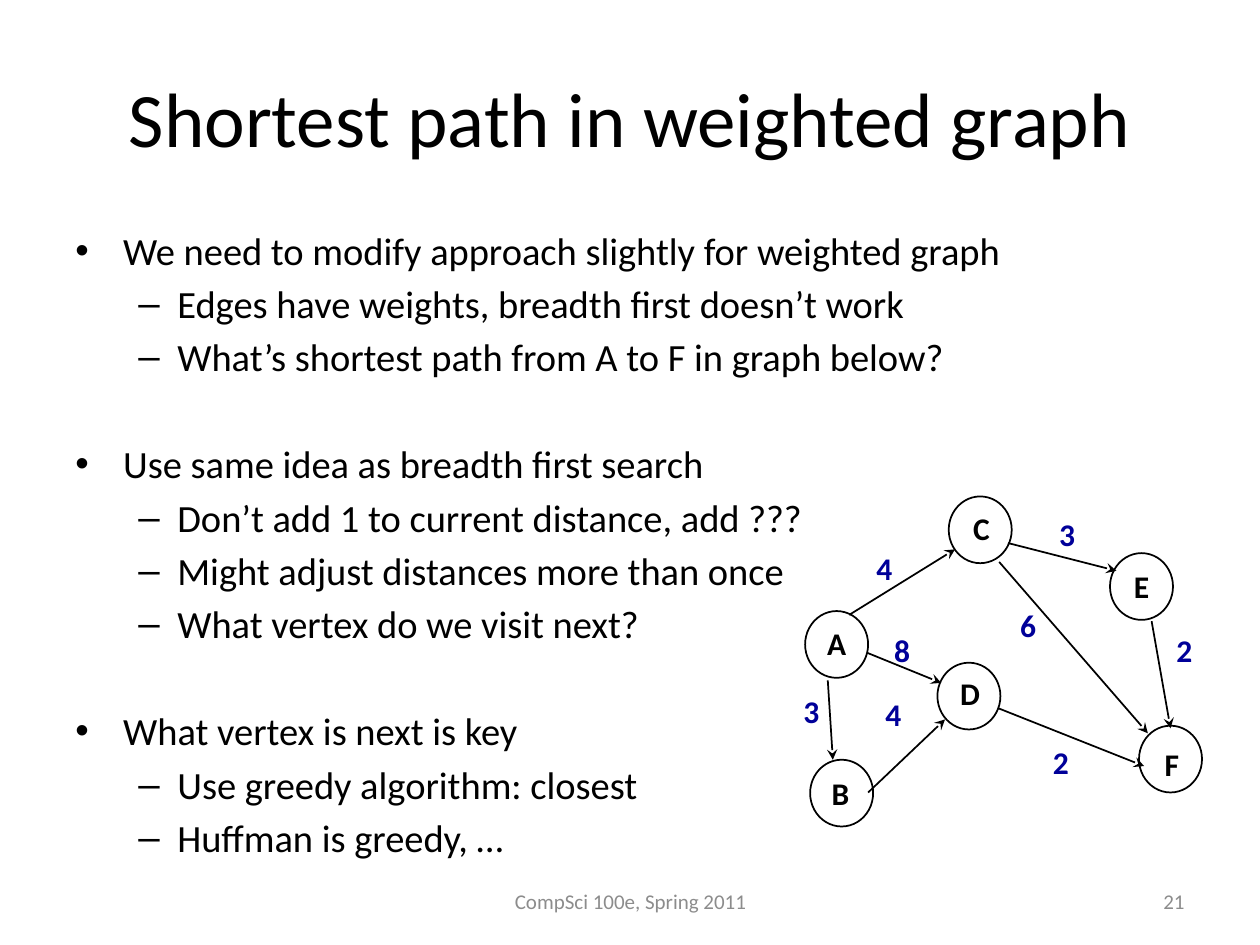
from lxml import etree
from pptx import Presentation
from pptx.dml.color import RGBColor
from pptx.enum.shapes import MSO_CONNECTOR, MSO_SHAPE
from pptx.enum.text import MSO_ANCHOR, PP_ALIGN
from pptx.oxml.ns import qn
from pptx.util import Inches, Pt

STRAIGHT, ELLIPSE = MSO_CONNECTOR.STRAIGHT, MSO_SHAPE.OVAL
TOP, MIDDLE = MSO_ANCHOR.TOP, MSO_ANCHOR.MIDDLE
LEFT, CENTER, RIGHT = PP_ALIGN.LEFT, PP_ALIGN.CENTER, PP_ALIGN.RIGHT

TITLE = "Shortest path in weighted graph"
SECTIONS = [
    ("We need to modify approach slightly for weighted graph",
     ["Edges have weights, breadth first doesn’t work",
      "What’s shortest path from A to F in graph below?"]),
    ("Use same idea as breadth first search",
     ["Don’t add 1 to current distance, add ???",
      "Might adjust distances more than once",
      "What vertex do we visit next?"]),
    ("What vertex is next is key",
     ["Use greedy algorithm: closest", "Huffman is greedy, …"]),
]
FOOTER, PAGE_NUMBER = "CompSci 100e, Spring 2011", "21"

# vertex: (circle left, top), (letter centre x, y)
VERTICES = {
    "A": ((6.39, 4.85), (6.64, 5.10)),
    "B": ((6.43, 6.03), (6.67, 6.29)),
    "C": ((7.53, 3.94), (7.79, 4.19)),
    "D": ((7.44, 5.26), (7.70, 5.50)),
    "E": ((8.81, 4.39), (9.06, 4.65)),
    "F": ((9.04, 5.76), (9.30, 6.06)),
}
# weight, (weight centre x, y), arrow start, arrow end
EDGES = [
    ("4", (7.02, 4.51), (6.74, 4.88), (7.58, 4.36)),  # A to C
    ("8", (7.16, 5.16), (6.88, 5.18), (7.47, 5.42)),  # A to D
    ("3", (6.44, 5.64), (6.57, 5.40), (6.61, 6.03)),  # A to B
    ("4", (7.09, 5.67), (6.89, 6.29), (7.50, 5.71)),  # B to D
    ("3", (8.47, 4.24), (8.00, 4.31), (8.86, 4.53)),  # C to E
    ("6", (8.16, 4.96), (7.93, 4.46), (9.11, 5.82)),  # C to F
    ("2", (8.42, 6.05), (7.92, 5.62), (9.08, 6.08)),  # D to F
    ("2", (9.40, 5.16), (9.14, 4.93), (9.29, 5.78)),  # E to F
]

THEME = {
    "font": "Calibri",
    "text": RGBColor(0, 0, 0),
    "weight": RGBColor(0x00, 0x00, 0x99),
    "muted": RGBColor(0x8C, 0x8C, 0x8C),
    "title_size": 44, "body_size": 22, "label_size": 18, "footer_size": 12,
}
WIDTH, HEIGHT, MARGIN = 10, 7.5, 0.5
CONTENT_WIDTH = WIDTH - 2 * MARGIN
CIRCLE = (0.5, 0.53)
LABEL = (0.46, 0.4)
LINE_WIDTH = 1
LEVELS = [("•", 0.38, 0.38), ("–", 0.81, 0.31)]  # bullet, text indent, hang
ITEM_GAP, SECTION_GAP = 4, 35


def style(paragraph, size, color, align=LEFT, bold=False):
    paragraph.alignment = align
    font = paragraph.font
    font.name, font.size, font.bold = THEME["font"], Pt(size), bold
    font.color.rgb = color


def add_frame(shapes, box, anchor=TOP):
    frame = shapes.add_textbox(*map(Inches, box)).text_frame
    frame.word_wrap = True
    frame.vertical_anchor = anchor
    return frame


def add_line_of_text(shapes, text, box, size, color, align=CENTER, bold=False):
    frame = add_frame(shapes, box, MIDDLE)
    frame.text = text
    style(frame.paragraphs[0], size, color, align, bold)


def add_label(shapes, text, center, color):
    left, top = (c - side / 2 for c, side in zip(center, LABEL))
    add_line_of_text(shapes, text, (left, top, *LABEL),
                     THEME["label_size"], color, bold=True)


def set_bullet(paragraph, level):
    bullet, indent, hang = LEVELS[level]
    paragraph.level = level
    properties = paragraph._p.get_or_add_pPr()
    properties.set("marL", str(Inches(indent)))
    properties.set("indent", str(-Inches(hang)))
    etree.SubElement(properties, qn("a:buFont")).set("typeface", "Arial")
    etree.SubElement(properties, qn("a:buChar")).set("char", bullet)


def add_outline(shapes, box):
    frame = add_frame(shapes, box)
    items = [(level, text) for head, points in SECTIONS
             for level, text in [(0, head)] + [(1, point) for point in points]]
    for index, (level, text) in enumerate(items):
        paragraph = frame.add_paragraph() if index else frame.paragraphs[0]
        paragraph.text = text
        if index:
            paragraph.space_before = Pt(ITEM_GAP if level else SECTION_GAP)
        set_bullet(paragraph, level)
        # Default run properties must follow the bullet in the XML.
        style(paragraph, THEME["body_size"], THEME["text"])


def add_arrow(shapes, start, end):
    arrow = shapes.add_connector(STRAIGHT, *map(Inches, start + end))
    arrow.line.color.rgb = THEME["text"]
    arrow.line.width = Pt(LINE_WIDTH)
    head = etree.SubElement(arrow.line._get_or_add_ln(), qn("a:tailEnd"))
    head.set("type", "stealth")
    etree.SubElement(arrow._element.spPr, qn("a:effectLst"))


def add_circle(shapes, corner):
    circle = shapes.add_shape(ELLIPSE, *map(Inches, corner + CIRCLE))
    circle.shadow.inherit = False
    circle.fill.background()
    circle.line.color.rgb = THEME["text"]
    circle.line.width = Pt(LINE_WIDTH)


def add_graph(shapes):
    graph = shapes.add_group_shape().shapes
    for _, _, start, end in EDGES:
        add_arrow(graph, start, end)
    for letter, (corner, center) in VERTICES.items():
        add_circle(graph, corner)
        add_label(graph, letter, center, THEME["text"])
    for weight, center, _, _ in EDGES:
        add_label(graph, weight, center, THEME["weight"])


def main():
    deck = Presentation()
    deck.slide_width, deck.slide_height = Inches(WIDTH), Inches(HEIGHT)
    shapes = deck.slides.add_slide(deck.slide_layouts[6]).shapes
    add_line_of_text(shapes, TITLE, (MARGIN, 0.3, CONTENT_WIDTH, 1.25),
                     THEME["title_size"], THEME["text"])
    add_outline(shapes, (MARGIN, 1.75, CONTENT_WIDTH, 4.95))
    add_graph(shapes)
    for text, left, width, align in [(PAGE_NUMBER, 7.17, 2.33, RIGHT),
                                     (FOOTER, 3.42, 3.17, CENTER)]:
        add_line_of_text(shapes, text, (left, 6.95, width, 0.4),
                         THEME["footer_size"], THEME["muted"], align)
    deck.save("out.pptx")


if __name__ == "__main__":
    main()
